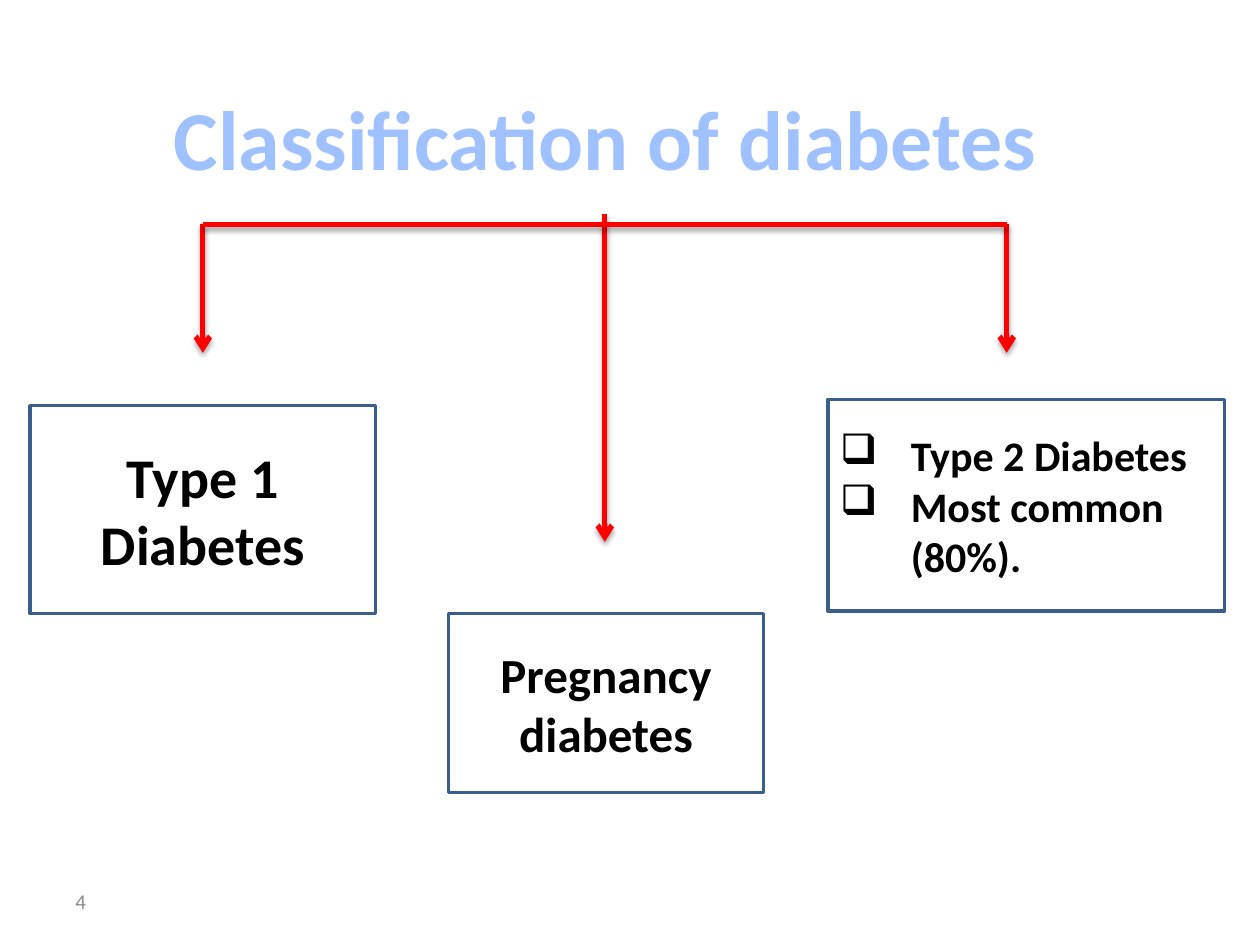
from pptx import Presentation
from pptx.dml.color import RGBColor
from pptx.enum.shapes import MSO_CONNECTOR, MSO_SHAPE
from pptx.enum.text import MSO_ANCHOR, PP_ALIGN
from pptx.oxml import parse_xml
from pptx.oxml.ns import nsdecls
from pptx.util import Inches, Pt


def color(value):
    return RGBColor.from_string(value)


def write(shape, text, size, fill, bold, align):
    frame = shape.text_frame
    frame.text = text
    frame.word_wrap = True
    frame.vertical_anchor = MSO_ANCHOR.MIDDLE
    for para in frame.paragraphs:
        para.alignment = align
        for span in para.runs:
            span.font.name = "Calibri"
            span.font.size = Pt(size)
            span.font.bold = bold
            span.font.color.rgb = color(fill)


deck = Presentation()
deck.slide_width = Inches(10)
deck.slide_height = Inches(7.5)
page = deck.slides.add_slide(deck.slide_layouts[5])

title = page.shapes.title
title.left, title.top = Inches(0.51), Inches(0.47)
title.width, title.height = Inches(8.59), Inches(1.24)
write(title, "Classification of diabetes", 48, "A0C1FF", True, PP_ALIGN.CENTER)

type_boxes = [
    ("Type 1\nDiabetes", 32, PP_ALIGN.CENTER, 0.24, 3.22, 2.74, 1.65),
    ("Type 2 Diabetes\nMost common (80%).", 24, PP_ALIGN.LEFT, 6.57, 3.17, 3.15, 1.68),
    ("Pregnancy diabetes", 28, PP_ALIGN.CENTER, 3.56, 4.87, 2.5, 1.42),
]
for text, size, align, left, top, width, height in type_boxes:
    box = page.shapes.add_shape(
        MSO_SHAPE.RECTANGLE, Inches(left), Inches(top), Inches(width), Inches(height)
    )
    box.shadow.inherit = False
    box.fill.solid()
    box.fill.fore_color.rgb = color("FFFFFF")
    box.line.color.rgb = color("3A5F8C")
    box.line.width = Pt(2)
    write(box, text, size, "000000", True, align)
    if align == PP_ALIGN.LEFT:
        for para in box.text_frame.paragraphs:
            properties = para._p.get_or_add_pPr()
            properties.set("marL", str(Inches(0.56)))
            properties.set("indent", str(Inches(-0.56)))
            properties.append(parse_xml(f'<a:buFont {nsdecls("a")} typeface="Wingdings"/>'))
            properties.append(parse_xml(f'<a:buChar {nsdecls("a")} char="q"/>'))

branch_top = 1.78
branches = [
    (1.61, branch_top, 1.61, 2.8, True),
    (4.8, 1.7, 4.8, 4.3, True),
    (7.99, branch_top, 7.99, 2.8, True),
    (1.61, branch_top, 7.99, branch_top, False),
]
for start_x, start_y, end_x, end_y, has_arrow in branches:
    branch = page.shapes.add_connector(
        MSO_CONNECTOR.STRAIGHT, Inches(start_x), Inches(start_y), Inches(end_x), Inches(end_y)
    )
    branch.line.color.rgb = color("FF0000")
    branch.line.width = Pt(3)
    if has_arrow:
        branch.line._get_or_add_ln().append(
            parse_xml(f'<a:tailEnd {nsdecls("a")} type="arrow"/>')
        )
    branch._element.spPr.append(parse_xml(
        f'<a:effectLst {nsdecls("a")}>'
        f'<a:outerShdw blurRad="{Pt(3.1)}" dist="{Pt(1.8)}" dir="5400000" rotWithShape="0">'
        '<a:srgbClr val="000000"><a:alpha val="35000"/></a:srgbClr>'
        '</a:outerShdw></a:effectLst>'
    ))

page_number = page.shapes.add_textbox(Inches(0.5), Inches(6.95), Inches(2.33), Inches(0.4))
write(page_number, "4", 12, "8C8C8C", False, PP_ALIGN.LEFT)

deck.save("out.pptx")
